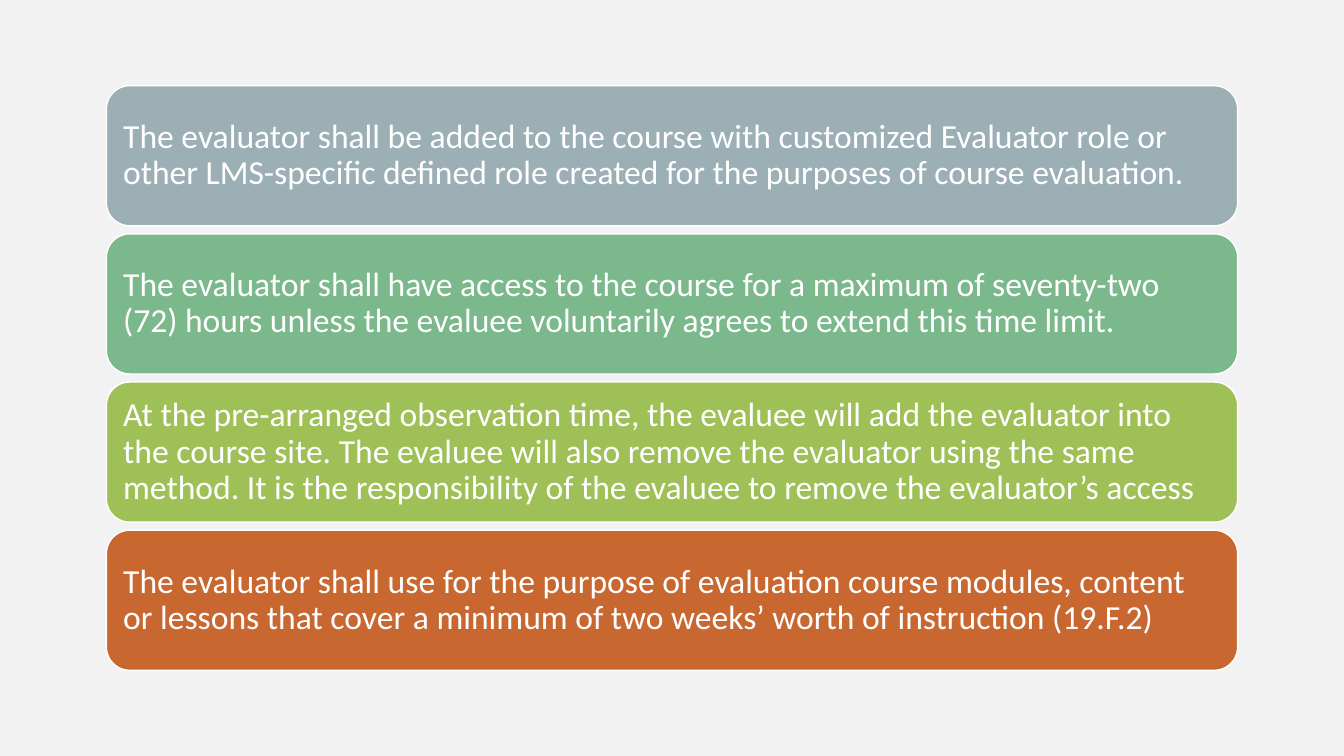
from pptx import Presentation
from pptx.dml.color import RGBColor
from pptx.enum.shapes import MSO_SHAPE
from pptx.enum.text import MSO_ANCHOR, PP_ALIGN
from pptx.util import Inches, Pt

ROUNDED = MSO_SHAPE.ROUNDED_RECTANGLE
MIDDLE = MSO_ANCHOR.MIDDLE
LEFT = PP_ALIGN.LEFT

WHITE = RGBColor(0xFF, 0xFF, 0xFF)
PALE_GREY = RGBColor(0xF2, 0xF2, 0xF2)
SLATE = RGBColor(0x9B, 0xAF, 0xB5)
GREEN = RGBColor(0x7B, 0xB8, 0x8C)
LIME = RGBColor(0x9F, 0xC0, 0x57)
RUST = RGBColor(0xC9, 0x67, 0x31)

RULES = [
    (SLATE, "The evaluator shall be added to the course with customized Evaluator role or "
            "other LMS-specific defined role created for the purposes of course evaluation."),
    (GREEN, "The evaluator shall have access to the course for a maximum of seventy-two "
            "(72) hours unless the evaluee voluntarily agrees to extend this time limit."),
    (LIME, "At the pre-arranged observation time, the evaluee will add the evaluator into "
           "the course site. The evaluee will also remove the evaluator using the same "
           "method. It is the responsibility of the evaluee to remove the evaluator’s access"),
    (RUST, "The evaluator shall use for the purpose of evaluation course modules, content "
           "or lessons that cover a minimum of two weeks’ worth of instruction (19.F.2)"),
]

SLIDE_W, SLIDE_H = 13.33, 7.5
BAR_W, BAR_H, GAP = 11.22, 1.39, 0.08
INSET = Inches(0.1)
FRAME = {"word_wrap": True, "vertical_anchor": MIDDLE, "margin_left": INSET,
         "margin_right": INSET, "margin_top": INSET, "margin_bottom": INSET}
PARAGRAPH = {"alignment": LEFT, "line_spacing": 0.9}
FONT = {"name": "Calibri", "size": Pt(24)}


def apply(target, values):
    """Set each named attribute on the target."""
    for name, value in values.items():
        setattr(target, name, value)


def add_bar(s, top, color, text):
    """Add one rounded bar holding a rule."""
    left = (SLIDE_W - BAR_W) / 2
    sp = s.shapes.add_shape(ROUNDED, Inches(left), Inches(top), Inches(BAR_W), Inches(BAR_H))
    sp.shadow.inherit = False
    sp.fill.solid()
    sp.fill.fore_color.rgb = color
    sp.line.color.rgb = WHITE
    sp.line.width = Pt(1)
    tf = sp.text_frame
    apply(tf, FRAME)
    p = tf.paragraphs[0]
    apply(p, PARAGRAPH)
    r = p.add_run()
    r.text = text
    apply(r.font, FONT)
    r.font.color.rgb = WHITE


def main():
    """Build the slide of course evaluation rules."""
    prs = Presentation()
    prs.slide_width, prs.slide_height = Inches(SLIDE_W), Inches(SLIDE_H)
    s = prs.slides.add_slide(prs.slide_layouts[6])
    s.background.fill.solid()
    s.background.fill.fore_color.rgb = PALE_GREY
    pitch = BAR_H + GAP
    first = (SLIDE_H - len(RULES) * pitch + GAP) / 2
    for i, (color, text) in enumerate(RULES):
        add_bar(s, first + i * pitch, color, text)
    prs.save("out.pptx")


if __name__ == "__main__":
    main()
